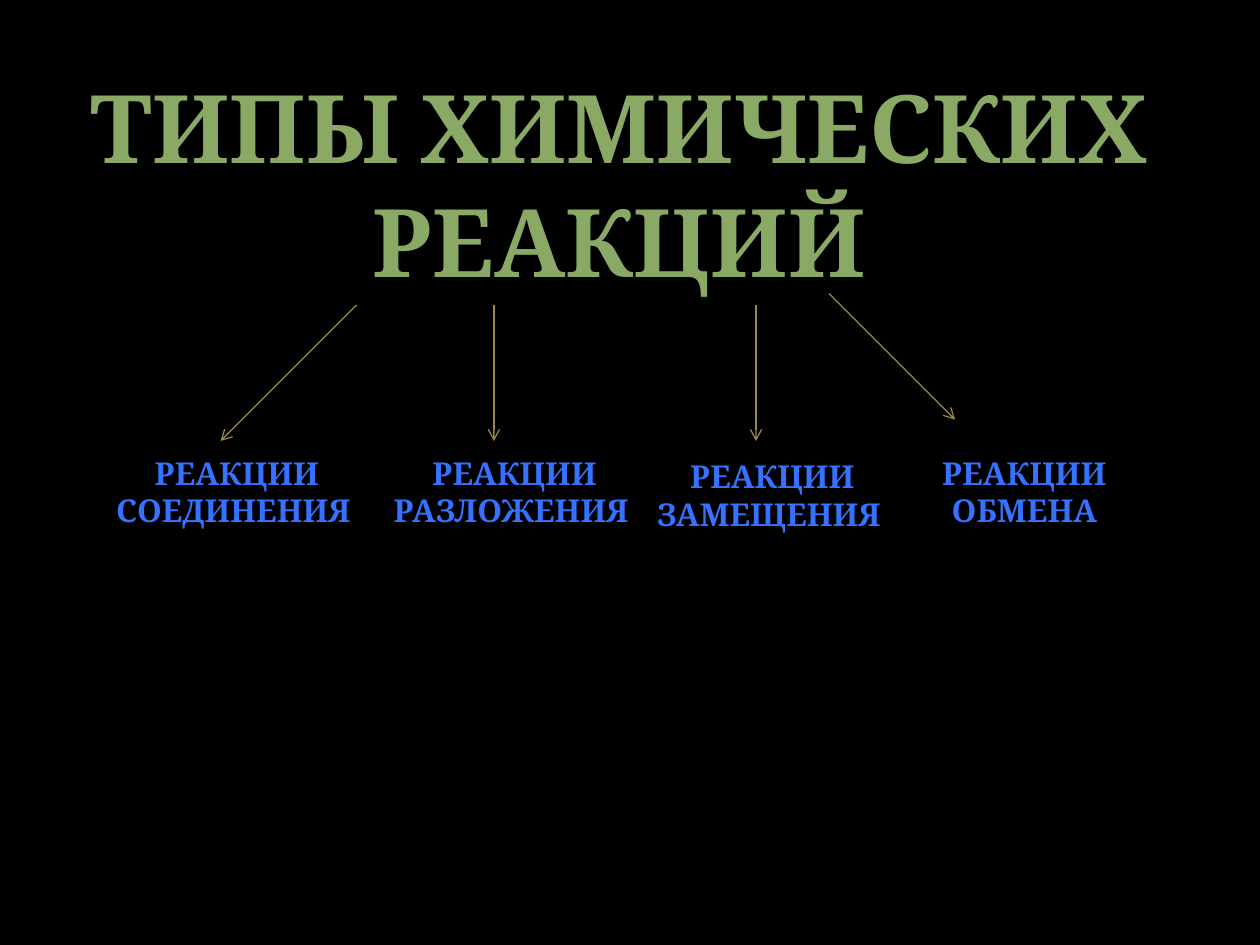
"""Build a slide that shows the four types of chemical reactions."""
import pptx
import pptx.dml.color
import pptx.enum.shapes
import pptx.enum.text
import pptx.oxml.ns
import pptx.util
from lxml import etree

Inches = pptx.util.Inches
RGBColor = pptx.dml.color.RGBColor

BLACK = RGBColor(0x00, 0x00, 0x00)
GREEN = RGBColor(0x89, 0xA9, 0x65)
BLUE = RGBColor(0x35, 0x72, 0xFF)
GOLD = RGBColor(0x99, 0x89, 0x46)
FONT = "Cambria"

ARROWS = [
    (2.83, 2.42, 1.75, 3.5),
    (3.92, 2.42, 3.92, 3.5),
    (6, 2.42, 6, 3.5),
    (6.58, 2.33, 7.58, 3.33),
]
LABELS = [
    ("РЕАКЦИИ СОЕДИНЕНИЯ ", 0.67, 3.55, 2.42),
    ("РЕАКЦИИ РАЗЛОЖЕНИЯ ", 2.92, 3.55, 2.33),
    ("РЕАКЦИИ ЗАМЕЩЕНИЯ ", 4.92, 3.58, 2.42),
    ("РЕАКЦИИ ОБМЕНА", 7.17, 3.55, 1.92),
]


def add_text(slide, text, left, top, width, height, size, color):
    box = slide.shapes.add_textbox(
        Inches(left), Inches(top), Inches(width), Inches(height))
    frame = box.text_frame
    frame.word_wrap = True
    frame.auto_size = pptx.enum.text.MSO_AUTO_SIZE.SHAPE_TO_FIT_TEXT
    para = frame.paragraphs[0]
    para.alignment = pptx.enum.text.PP_ALIGN.CENTER
    run = para.add_run()
    run.text = text
    run.font.name = FONT
    run.font.size = pptx.util.Pt(size)
    run.font.bold = True
    run.font.color.rgb = color


def add_arrow(slide, *ends):
    arrow = slide.shapes.add_connector(
        pptx.enum.shapes.MSO_CONNECTOR.STRAIGHT, *map(Inches, ends))
    arrow.line.color.rgb = GOLD
    arrow.line.width = pptx.util.Pt(0.75)
    qn = pptx.oxml.ns.qn
    line = arrow.line._get_or_add_ln()
    etree.SubElement(line, qn("a:tailEnd"), type="arrow")
    etree.SubElement(arrow._element.spPr, qn("a:effectLst"))


def main():
    deck = pptx.Presentation()
    deck.slide_width, deck.slide_height = Inches(10), Inches(7.5)
    slide = deck.slides.add_slide(deck.slide_layouts[6])
    fill = slide.background.fill
    fill.solid()
    fill.fore_color.rgb = BLACK

    add_text(slide, "ТИПЫ ХИМИЧЕСКИХ РЕАКЦИЙ", 0.25, 0.5, 9.33, 1.92, 54, GREEN)
    for ends in ARROWS:
        add_arrow(slide, *ends)
    for text, left, top, width in LABELS:
        add_text(slide, text, left, top, width, 0.71, 18, BLUE)
    deck.save("out.pptx")


if __name__ == "__main__":
    main()
